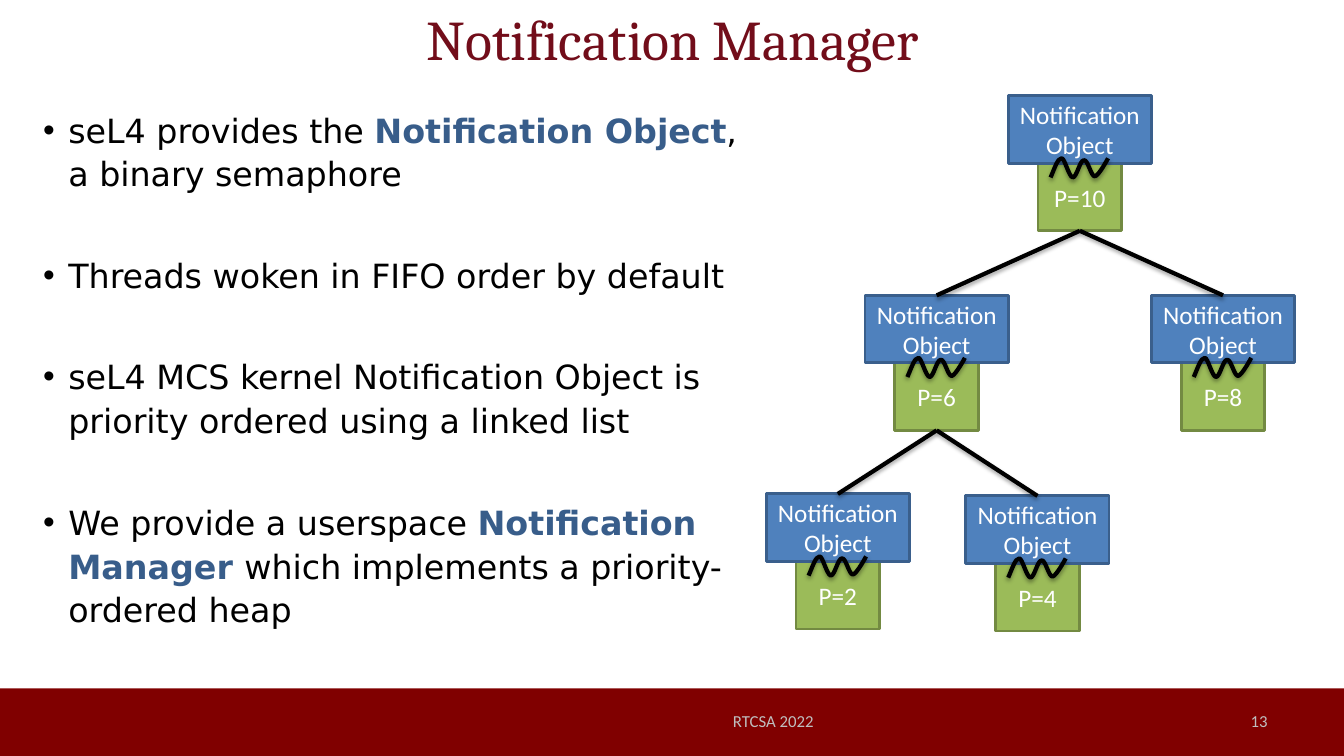
"""Build the Notification Manager slide with its priority-ordered heap."""
from typing import NamedTuple, Optional

from lxml.etree import SubElement
from pptx import Presentation
from pptx.dml.color import RGBColor
from pptx.enum.shapes import MSO_CONNECTOR as Connector, MSO_SHAPE as Shape
from pptx.enum.text import MSO_ANCHOR as Anchor, PP_ALIGN as Align
from pptx.oxml.ns import qn
from pptx.util import Inches, Pt

MAROON = RGBColor(0x80, 0x00, 0x00)
TITLE_RED = RGBColor(0x72, 0x0D, 0x1A)
ACCENT = RGBColor(0x38, 0x5D, 0x8A)
BLACK = RGBColor(0x00, 0x00, 0x00)
WHITE = RGBColor(0xFF, 0xFF, 0xFF)
GREY = RGBColor(0xBF, 0xBF, 0xBF)
BLUE = RGBColor(0x4F, 0x81, 0xBD)
BLUE_EDGE = RGBColor(0x3A, 0x5F, 0x8C)
GREEN = RGBColor(0x9B, 0xBB, 0x59)
GREEN_EDGE = RGBColor(0x73, 0x8A, 0x42)

OBJECT_WIDTH, THREAD_WIDTH, BOX_HEIGHT = 1.42, 0.83, 0.67
THREAD_INSET = (OBJECT_WIDTH - THREAD_WIDTH) / 2
SQUIGGLE_START = (0.42, 0.81)
SQUIGGLE_CURVES = (
    ((0.46, 0.72), (0.49, 0.62), (0.53, 0.62)),
    ((0.56, 0.62), (0.60, 0.80), (0.64, 0.81)),
    ((0.68, 0.81), (0.71, 0.64), (0.75, 0.64)),
    ((0.79, 0.63), (0.82, 0.80), (0.86, 0.80)),
    ((0.90, 0.79), (0.99, 0.62), (0.99, 0.62)),
)


class TextRun(NamedTuple):
    text: str
    highlighted: bool = False


class HeapNode(NamedTuple):
    priority: int
    left: float
    top: float
    parent: Optional[int] = None


class Footer(NamedTuple):
    text: str
    left: float
    width: float
    align: Align


BULLETS = (
    (TextRun("seL4 provides the "), TextRun("Notification Object", True),
     TextRun(", a binary semaphore")),
    (TextRun("Threads woken in FIFO order by default"),),
    (TextRun("seL4 MCS kernel Notification Object is priority ordered using a linked list"),),
    (TextRun("We provide a userspace "), TextRun("Notification Manager ", True),
     TextRun("which implements a priority-ordered heap")),
)
HEAP = (
    HeapNode(10, 10, 0.95),
    HeapNode(8, 11.42, 2.93, parent=10),
    HeapNode(6, 8.58, 2.93, parent=10),
    HeapNode(4, 9.58, 4.92, parent=6),
    HeapNode(2, 7.6, 4.9, parent=6),
)
FOOTERS = (
    Footer("13", 9.56, 3.11, Align.RIGHT),
    Footer("RTCSA 2022", 5.56, 4.22, Align.CENTER),
)


def add_run(paragraph, text: str, font_name: str, size: float, color: RGBColor,
            bold: bool = False) -> None:
    run = paragraph.add_run()
    run.text = text
    run.font.name = font_name
    run.font.size = Pt(size)
    run.font.bold = bold
    run.font.color.rgb = color


def add_box(shapes, left: float, top: float, width: float, height: float,
            fill: RGBColor, edge: Optional[RGBColor] = None, text: str = ""):
    box = shapes.add_shape(Shape.RECTANGLE, Inches(left), Inches(top),
                           Inches(width), Inches(height))
    box.shadow.inherit = False
    box.fill.solid()
    box.fill.fore_color.rgb = fill
    if edge is None:
        box.line.fill.background()
    else:
        box.line.color.rgb = edge
        box.line.width = Pt(2)
    if text:
        box.text_frame.vertical_anchor = Anchor.MIDDLE
        paragraph = box.text_frame.paragraphs[0]
        paragraph.alignment = Align.CENTER
        add_run(paragraph, text, "Calibri", 18, WHITE)
    return box


def style_stroke(stroke) -> None:
    stroke.line.color.rgb = BLACK
    stroke.line.width = Pt(3)
    effects = SubElement(stroke._element.spPr, qn("a:effectLst"))
    shadow = SubElement(effects, qn("a:outerShdw"), blurRad=str(Pt(3.1)),
                        dist=str(Pt(1.8)), dir="5400000", rotWithShape="0")
    color = SubElement(shadow, qn("a:srgbClr"), val=str(BLACK))
    SubElement(color, qn("a:alpha"), val="35000")


def add_squiggle(shapes, left: float, top: float) -> None:
    start, *controls = [
        (Inches(left + x), Inches(top + y))
        for x, y in (SQUIGGLE_START, *(point for curve in SQUIGGLE_CURVES for point in curve))]
    builder = shapes.build_freeform(*start)
    builder.add_line_segments(controls, close=False)
    squiggle = builder.convert_to_shape()
    outline = next(squiggle._element.iter(qn("a:path")))
    segments = outline.findall(qn("a:lnTo"))
    for index in range(0, len(segments), 3):
        curve = SubElement(outline, qn("a:cubicBezTo"))
        for segment in segments[index:index + 3]:
            curve.append(segment[0])
            outline.remove(segment)
    squiggle.fill.background()
    style_stroke(squiggle)


def add_node(slide, node: HeapNode) -> tuple:
    shapes = slide.shapes.add_group_shape().shapes
    thread = add_box(shapes, node.left + THREAD_INSET, node.top + BOX_HEIGHT,
                     THREAD_WIDTH, BOX_HEIGHT, GREEN, GREEN_EDGE, f"P={node.priority}")
    notification = add_box(shapes, node.left, node.top, OBJECT_WIDTH, BOX_HEIGHT,
                           BLUE, BLUE_EDGE, "Notification Object")
    add_squiggle(shapes, node.left, node.top)
    return notification, thread


def add_heap(slide) -> None:
    boxes = {node.priority: add_node(slide, node) for node in HEAP}
    for node in HEAP:
        if node.parent is not None:
            edge = slide.shapes.add_connector(Connector.STRAIGHT, 0, 0, 0, 0)
            edge.begin_connect(boxes[node.parent][1], 2)
            edge.end_connect(boxes[node.priority][0], 0)
            style_stroke(edge)


def add_title(slide) -> None:
    title = slide.shapes.title
    title.left, title.top = Inches(0.67), Inches(-0.25)
    title.width, title.height = Inches(12), Inches(1.25)
    title.text_frame.vertical_anchor = Anchor.MIDDLE
    paragraph = title.text_frame.paragraphs[0]
    paragraph.alignment = Align.CENTER
    add_run(paragraph, "Notification Manager", "Cambria", 40, TITLE_RED)


def add_bullets(slide) -> None:
    frame = slide.shapes.add_textbox(Inches(0.33), Inches(1), Inches(7.17),
                                     Inches(5.7)).text_frame
    frame.word_wrap = True
    for index, runs in enumerate(BULLETS):
        paragraph = frame.add_paragraph() if index else frame.paragraphs[0]
        properties = paragraph._p.get_or_add_pPr()
        properties.set("marL", str(Inches(0.25)))
        properties.set("indent", str(Inches(-0.25)))
        SubElement(properties, qn("a:buFont"), typeface="Arial")
        SubElement(properties, qn("a:buChar"), char="•")
        paragraph.line_spacing = 1.1
        paragraph.space_before = Pt(41 if index else 0)
        for run in runs:
            add_run(paragraph, run.text, "DejaVu Sans", 23.8,
                    ACCENT if run.highlighted else BLACK, run.highlighted)


def add_footer(slide, footer: Footer) -> None:
    frame = slide.shapes.add_textbox(Inches(footer.left), Inches(6.95),
                                     Inches(footer.width), Inches(0.4)).text_frame
    frame.word_wrap = True
    frame.vertical_anchor = Anchor.MIDDLE
    paragraph = frame.paragraphs[0]
    paragraph.alignment = footer.align
    paragraph.space_after = Pt(6)
    add_run(paragraph, footer.text, "Calibri", 12, GREY)


def main() -> None:
    presentation = Presentation()
    presentation.slide_width, presentation.slide_height = Inches(13.33), Inches(7.5)
    slide = presentation.slides.add_slide(presentation.slide_layouts[5])
    add_box(slide.shapes, 0, 6.83, 13.33, 0.67, MAROON)
    add_title(slide)
    add_bullets(slide)
    for footer in FOOTERS:
        add_footer(slide, footer)
    add_heap(slide)
    presentation.save("out.pptx")


if __name__ == "__main__":
    main()
